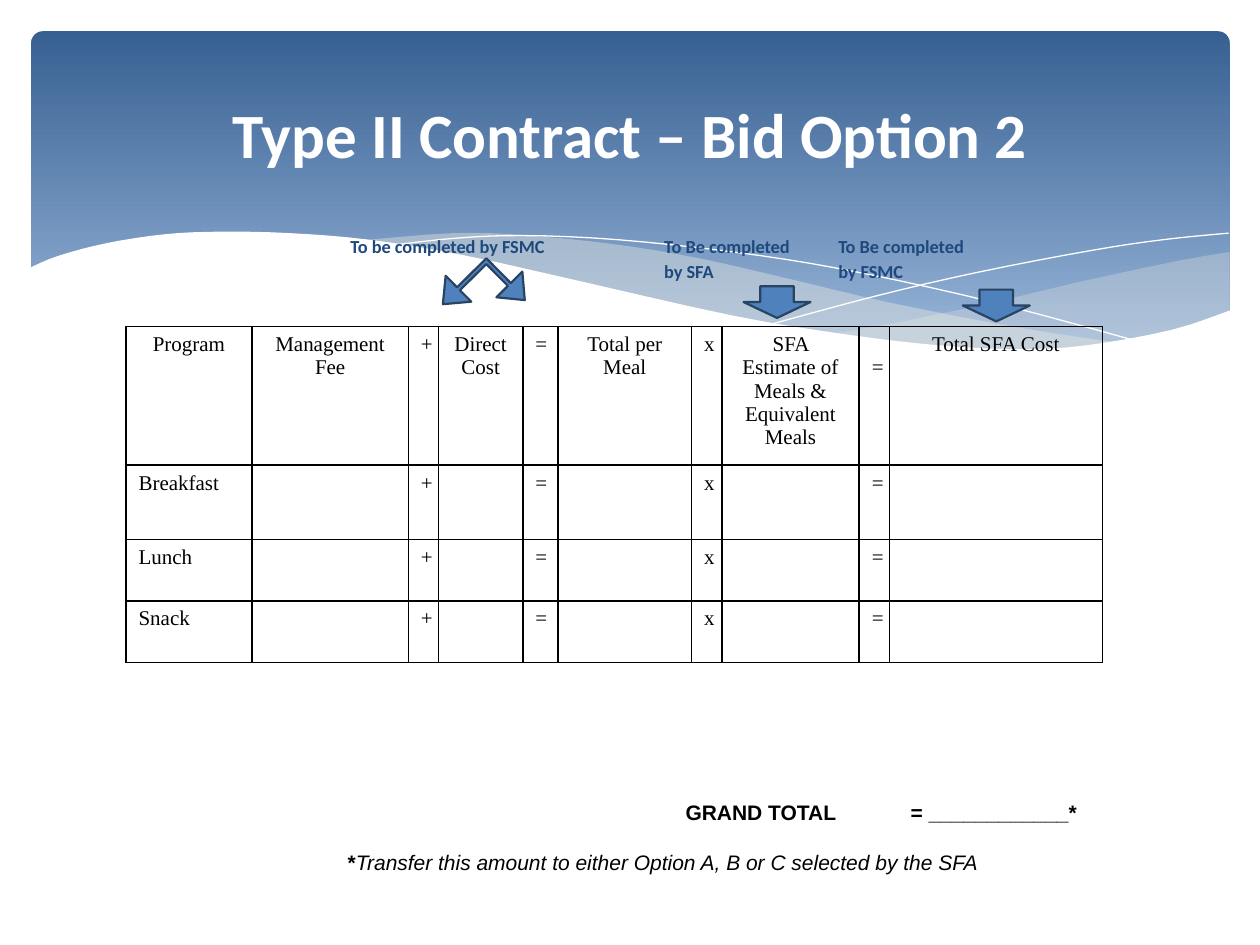
from lxml.etree import SubElement
from pptx import Presentation
from pptx.dml.color import RGBColor
from pptx.enum.shapes import MSO_SHAPE
from pptx.enum.text import MSO_ANCHOR, MSO_AUTO_SIZE, PP_ALIGN
from pptx.oxml.ns import qn
from pptx.util import Cm, Pt

HUES = {"deep": "376092", "pale": "95B3D7", "sand": "EEECE1", "white": "FFFFFF",
        "navy": "1F497D", "black": "000000", "blue": "4F81BD", "edge": "294363"}
RGB = {name: RGBColor.from_string(code) for name, code in HUES.items()}

deck = Presentation()
deck.slide_width, deck.slide_height = Cm(25.4), Cm(19.05)
slide = deck.slides.add_slide(deck.slide_layouts[1])
shapes = slide.shapes
title, body = slide.placeholders


def wave(edges, closed=True):
    """Draw a shape whose edges run smoothly through the given points (cm)."""
    trace = []
    for edge in edges:
        ends = [edge[0], *edge, edge[-1]]
        for a, b, c, d in zip(ends, ends[1:], ends[2:], ends[3:]):
            for t in (0, 0.25, 0.5, 0.75):
                trace.append(tuple(
                    q + t * ((r - p) + t * ((2 * p - 5 * q + 4 * r - s)
                             + t * (3 * q - p - 3 * r + s))) / 2
                    for p, q, r, s in zip(a, b, c, d)))
        trace.append(edge[-1])
    dots = [(Cm(x), Cm(y)) for x, y in trace]
    pen = shapes.build_freeform(*dots[0])
    pen.add_line_segments(dots[1:], close=closed)
    form = pen.convert_to_shape()
    form.shadow.inherit = False
    return form


# Banner with gradient
card = shapes.add_shape(MSO_SHAPE.ROUNDED_RECTANGLE, Cm(0.63), Cm(0.63), Cm(24.16), Cm(6.86))
card.adjustments[0] = 0.034
card.shadow.inherit = False
card.line.fill.background()
card.fill.gradient()
card.fill.gradient_angle = 270
for stop, hue, place in zip(card.fill.gradient_stops, ("deep", "pale"), (0, 0.9)):
    stop.color.rgb = RGB[hue]
    stop.position = place

# Filled waves: edges, colour, opacity in percent
right = [
    [(24.79, 5.08), (23.75, 5.26), (21.87, 5.66), (19.79, 6.15), (17.93, 6.53), (16.79, 6.73)],
    [(16.79, 6.73), (18.26, 6.91), (19.84, 7.04), (21.21, 7.04), (22.58, 6.91),
     (23.75, 6.65), (24.79, 6.27)]]
middle = [
    [(22.68, 6.93), (20.5, 6.6), (17.93, 6.1), (15.98, 5.64), (14.1, 5.21),
     (12.42, 4.93), (10.67, 4.75), (9.17, 4.7), (7.26, 4.85)],
    [(7.26, 4.85), (9.19, 5.16), (11.4, 5.64), (13.46, 6.1), (16.1, 6.63),
     (18.01, 6.91), (19.94, 7.06), (21.29, 7.06), (22.68, 6.93)]]
front = [
    [(24.82, 6.25), (23.62, 6.65), (21.92, 6.96), (20.55, 7.04), (18.9, 6.96),
     (16.97, 6.73), (14.71, 6.35), (11.35, 5.59), (9.27, 5.13), (7.42, 4.83),
     (5.84, 4.7), (4.5, 4.67), (3.35, 4.72), (2.16, 4.9), (1.17, 5.16), (0.58, 5.41)],
    [(0.58, 8.36), (24.82, 8.36)]]
threads = [
    [(7.85, 4.95), (9.22, 4.8), (10.57, 4.75), (12.42, 4.83), (14.78, 5.08),
     (16.89, 5.41), (19.3, 5.92), (21.11, 6.38), (23.04, 6.91)],
    [(15.57, 6.53), (17.65, 5.97), (19.71, 5.49), (22, 5.05), (23.47, 4.83), (24.77, 4.7)]]

for edges, hue, alpha in ((right, "sand", 29), (middle, "sand", 40)):
    form = wave(edges)
    form.fill.solid()
    form.fill.fore_color.rgb = RGB[hue]
    form.line.fill.background()
    tint = form.element.spPr.find(qn("a:solidFill"))[0]
    SubElement(tint, qn("a:alpha"), val=str(alpha * 1000))

# Thin white lines, then the white front wave
for edge in threads:
    form = wave([edge], closed=False)
    form.fill.background()
    form.line.color.rgb = RGB["white"]
    form.line.width = Pt(0)
form = wave(front)
form.fill.solid()
form.fill.fore_color.rgb = RGB["white"]
form.line.fill.background()

# Bring the placeholders in front of the banner
tree = card.element.getparent()
tree.append(body.element)
tree.append(title.element)

# Title
title.left, title.top, title.width, title.height = Cm(1.27), Cm(0.94), Cm(22.86), Cm(3.48)
frame = title.text_frame
frame.text = "Type II Contract – Bid Option 2"
frame.vertical_anchor = MSO_ANCHOR.MIDDLE
para = frame.paragraphs[0]
para.alignment = PP_ALIGN.CENTER
para.font.name, para.font.size, para.font.bold = "Calibri", Pt(36), True
para.font.color.rgb = RGB["white"]

# Who fills in which column: the body, then two labels to its right
body.left, body.top, body.width, body.height = Cm(0.43), Cm(4.24), Cm(24.56), Cm(12.7)
body.text_frame.auto_size = MSO_AUTO_SIZE.NONE
body.text_frame.text = "To be completed by FSMC"
props = body.text_frame.paragraphs[0]._p.get_or_add_pPr()
props.set("marL", str(Cm(6.38)))
props.set("indent", "0")
SubElement(props, qn("a:buNone"))
frames = [body.text_frame]
for x, who in ((13.14, "SFA"), (16.65, "FSMC")):
    label = shapes.add_textbox(Cm(x), Cm(4.24), Cm(3.4), Cm(1.6))
    label.text_frame.word_wrap = True
    label.text_frame.text = f"To Be completed\nby {who}"
    frames.append(label.text_frame)
for frame in frames:
    frame.margin_top = Cm(0.5)
    for para in frame.paragraphs:
        para.space_before, para.space_after = Pt(0), Pt(2)
        para.font.name, para.font.size, para.font.bold = "Calibri", Pt(10.5), True
        para.font.color.rgb = RGB["navy"]

# Bid table
signs = {2: "+", 4: "=", 6: "x", 8: "="}
heads = ["Program", "Management Fee", "+", "Direct\nCost", "=", "Total per Meal", "x",
         "SFA Estimate of Meals & Equivalent Meals", "=", "Total SFA Cost"]
rows = [heads] + [[meal] + [signs.get(col, "") for col in range(1, 10)]
                  for meal in ("Breakfast", "Lunch", "Snack")]
widths = [2.54, 3.15, 0.61, 1.7, 0.71, 2.69, 0.61, 2.77, 0.61, 4.29]
heights = [2.62, 1.5, 1.24, 1.24]
grid = shapes.add_table(4, 10, Cm(2.54), Cm(6.58), Cm(sum(widths)), Cm(sum(heights))).table
grid.first_row = grid.horz_banding = False
for col, width in zip(grid.columns, widths):
    col.width = Cm(width)
for row, height in zip(grid.rows, heights):
    row.height = Cm(height)
for r, texts in enumerate(rows):
    for c, text in enumerate(texts):
        cell = grid.cell(r, c)
        cell.text = text
        for para in cell.text_frame.paragraphs:
            para.font.name, para.font.size = "Times New Roman", Pt(12)
            para.font.color.rgb = RGB["black"]
            if r == 0 and c != 2:
                para.alignment = PP_ALIGN.CENTER
        props = cell._tc.get_or_add_tcPr()
        for side in ("lnL", "lnR", "lnT", "lnB"):
            line = SubElement(props, qn("a:" + side), w=str(Pt(1)))
            SubElement(SubElement(line, qn("a:solidFill")), qn("a:srgbClr"), val=HUES["black"])
        cell.fill.background()
grid.cell(0, 8).margin_top = Cm(0.6)

# Grand total and footnote
note = shapes.add_textbox(Cm(3.61), Cm(15.44), Cm(18.64), Cm(2.31))
frame = note.text_frame
frame.word_wrap = True
frame.vertical_anchor = MSO_ANCHOR.BOTTOM
frame.text = "\tGRAND TOTAL\t= ____________*\n\t*"
total, foot = frame.paragraphs
tail = foot.add_run()
tail.text = "Transfer this amount to either Option A, B or C selected by the SFA"
tail.font.bold, tail.font.italic = False, True
foot.space_before = Pt(14)
for para, stops in ((total, (9.96, 14.5)), (foot, (3.15,))):
    tabs = SubElement(para._p.get_or_add_pPr(), qn("a:tabLst"))
    for stop in stops:
        SubElement(tabs, qn("a:tab"), pos=str(Cm(stop)), algn="l")
    for run in para.runs:
        run.font.name, run.font.size = "Arial", Pt(12)
        run.font.color.rgb = RGB["black"]
        if run.font.bold is None:
            run.font.bold = True

# Arrows from the labels to the columns
arrows = [(MSO_SHAPE.DOWN_ARROW, 19.41, 5.84, 1.35, 0.64, 0),
          (MSO_SHAPE.DOWN_ARROW, 14.99, 5.77, 1.35, 0.64, 0),
          (MSO_SHAPE.LEFT_UP_ARROW, 9.02, 5.03, 1.47, 1.6, 225.3)]
for kind, x, y, w, h, turn in arrows:
    arrow = shapes.add_shape(kind, Cm(x), Cm(y), Cm(w), Cm(h))
    arrow.rotation = turn
    arrow.shadow.inherit = False
    arrow.fill.solid()
    arrow.fill.fore_color.rgb = RGB["blue"]
    arrow.line.color.rgb = RGB["edge"]
    arrow.line.width = Pt(1.25)
for i, ratio in enumerate((0.056, 0.25, 0.301)):
    arrow.adjustments[i] = ratio

deck.save("out.pptx")
